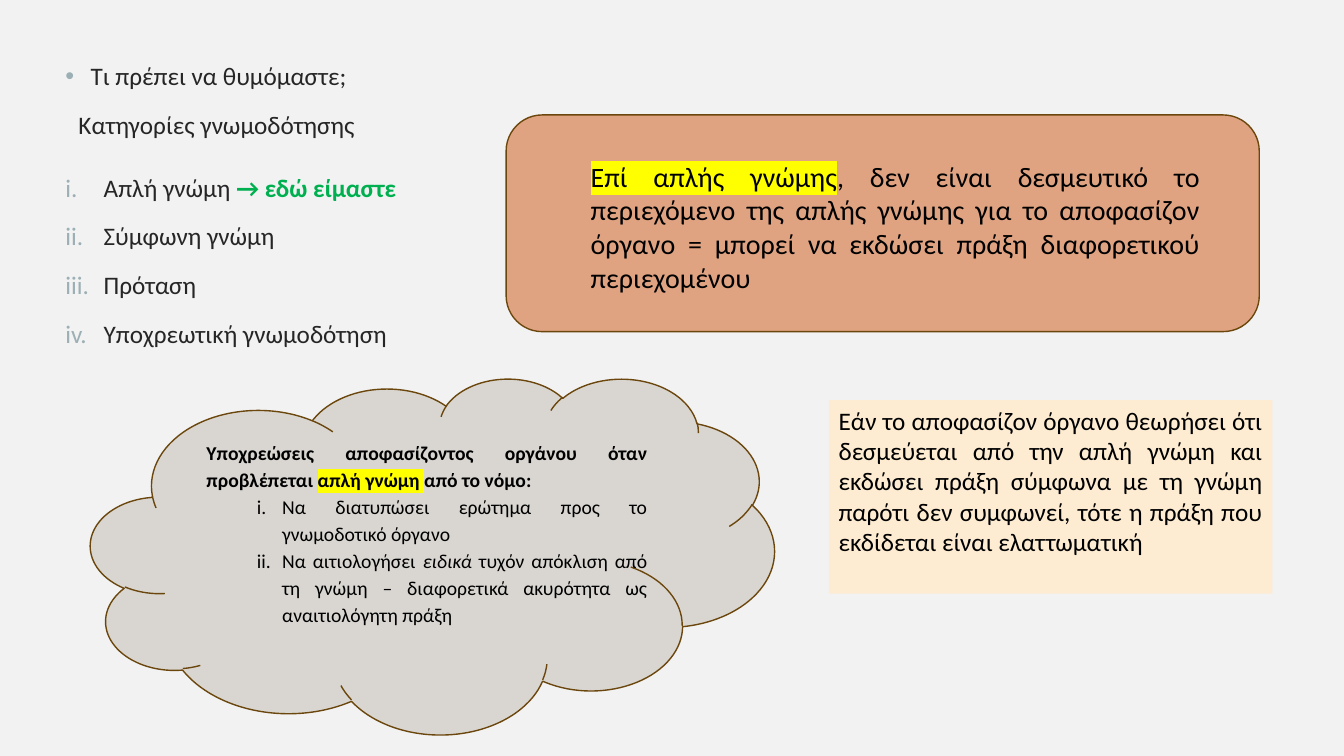
from lxml import etree
from pptx import Presentation
from pptx.dml.color import RGBColor
from pptx.enum.shapes import MSO_SHAPE
from pptx.enum.text import PP_ALIGN
from pptx.oxml.ns import qn
from pptx.util import Inches, Pt

ROUNDED, CLOUD = MSO_SHAPE.ROUNDED_RECTANGLE, MSO_SHAPE.CLOUD
LEFT, JUSTIFY = PP_ALIGN.LEFT, PP_ALIGN.JUSTIFY
BLACK, DARK, GREEN, YELLOW = "000000", "262626", "00B050", "FFFF00"
BULLET, BROWN = "9BAFB5", "6C470D"


def rgb(value):
    return RGBColor.from_string(value)


def add_paragraph(tf, runs, size, color=BLACK, align=JUSTIFY, margin=0, indent=0,
                  spacing=None, before=0, after=0, bullet=None, bullet_color=None):
    """Add a paragraph; each run is (text, options: bold, italic, color, highlight)."""
    first = tf.paragraphs[0]
    p = tf.add_paragraph() if first.runs else first
    p.alignment = align
    p.line_spacing, p.space_before, p.space_after = spacing, Pt(before), Pt(after)
    pPr = p._p.get_or_add_pPr()
    pPr.set("marL", str(Inches(margin)))
    pPr.set("indent", str(Inches(indent)))
    if bullet_color:
        clr = etree.SubElement(pPr, qn("a:buClr"))
        etree.SubElement(clr, qn("a:srgbClr"), val=bullet_color)
    if bullet == "•":
        etree.SubElement(pPr, qn("a:buFont"), typeface="Arial")
        etree.SubElement(pPr, qn("a:buChar"), char=bullet)
    elif bullet:
        etree.SubElement(pPr, qn("a:buAutoNum"), type=bullet)
    for text, options in runs:
        r = p.add_run()
        r.text = text
        r.font.size, r.font.name = Pt(size), "Calibri"
        r.font.bold = options.get("bold", False)
        r.font.italic = options.get("italic", False)
        r.font.color.rgb = rgb(options.get("color", color))
        if "highlight" in options:
            mark = etree.Element(qn("a:highlight"))
            etree.SubElement(mark, qn("a:srgbClr"), val=options["highlight"])
            r.font._element.find(qn("a:latin")).addprevious(mark)


prs = Presentation()
prs.slide_width, prs.slide_height = Inches(13.33), Inches(7.5)
s = prs.slides.add_slide(prs.slide_layouts[6])
s.background.fill.solid()
s.background.fill.fore_color.rgb = rgb("F2F2F2")

# Outline shapes and text frames, from back to front
frames = []
for kind, fill, box in [
    (None, None, (0.55, 0.55, 12.48, 6.33)),
    (ROUNDED, "E0A382", (5.02, 1.14, 7.47, 2.15)),
    (None, None, (5.76, 1.53, 6.24, 1.75)),
    (CLOUD, "D9D6D1", (0.9, 3.75, 6.78, 3.53)),
    (None, None, (1.45, 4.29, 5.07, 2.44)),
    (None, "FDECD2", (8.22, 3.97, 4.4, 1.92)),
]:
    place = [Inches(v) for v in box]
    if kind is None:
        sp = s.shapes.add_textbox(*place)
        sp.text_frame.word_wrap = True
        frames.append(sp.text_frame)
    else:
        sp = s.shapes.add_shape(kind, *place)
        sp.shadow.inherit = False
        sp.line.color.rgb = rgb(BROWN)
        sp.line.width = Pt(1)
    if fill:
        sp.fill.solid()
        sp.fill.fore_color.rgb = rgb(fill)
categories, simple_opinion, duties, defect = frames

# Categories of opinion
add_paragraph(categories, [("Τι πρέπει να θυμόμαστε;", {})], 18, DARK, LEFT,
              0.25, -0.25, before=10, bullet="•", bullet_color=BULLET)
add_paragraph(categories, [("Κατηγορίες γνωμοδότησης ", {})], 18, DARK,
              margin=0.38, indent=-0.25, spacing=1.15, before=10, after=10)
for runs in [
    [("Απλή γνώμη ", {}), ("→ εδώ είμαστε ", {"color": GREEN, "bold": True})],
    [("Σύμφωνη γνώμη ", {})],
    [("Πρόταση ", {})],
    [("Υποχρεωτική γνωμοδότηση", {})],
]:
    add_paragraph(categories, runs, 18, DARK, margin=0.38, indent=-0.38, spacing=1.15,
                  before=10, bullet="romanLcPeriod", bullet_color=BULLET)

# Simple opinion
add_paragraph(simple_opinion, [
    ("Επί απλής γνώμης", {"highlight": YELLOW}),
    (", δεν είναι δεσμευτικό το περιεχόμενο της απλής γνώμης για το αποφασίζον "
     "όργανο = μπορεί να εκδώσει πράξη διαφορετικού περιεχομένου", {}),
], 20)

# Duties of the deciding body
add_paragraph(duties, [
    ("Υποχρεώσεις αποφασίζοντος οργάνου όταν προβλέπεται ", {"bold": True}),
    ("απλή γνώμη ", {"bold": True, "highlight": YELLOW}),
    ("από το νόμο: ", {"bold": True}),
], 14, margin=0.5, spacing=1.15)
for runs in [
    [("Να διατυπώσει ερώτημα προς το γνωμοδοτικό όργανο ", {})],
    [("Να αιτιολογήσει ", {}), ("ειδικά", {"italic": True}),
     (" τυχόν απόκλιση από τη γνώμη – διαφορετικά ακυρότητα ως αναιτιολόγητη πράξη ", {})],
]:
    add_paragraph(duties, runs, 14, margin=1.25, indent=-0.25, spacing=1.15,
                  bullet="romanLcPeriod")

# Defective act
add_paragraph(defect, [
    ("Εάν το αποφασίζον όργανο θεωρήσει ότι δεσμεύεται από την απλή γνώμη και εκδώσει "
     "πράξη σύμφωνα με τη γνώμη παρότι δεν συμφωνεί, τότε η πράξη που εκδίδεται είναι "
     "ελαττωματική", {}),
], 18)

prs.save("out.pptx")
